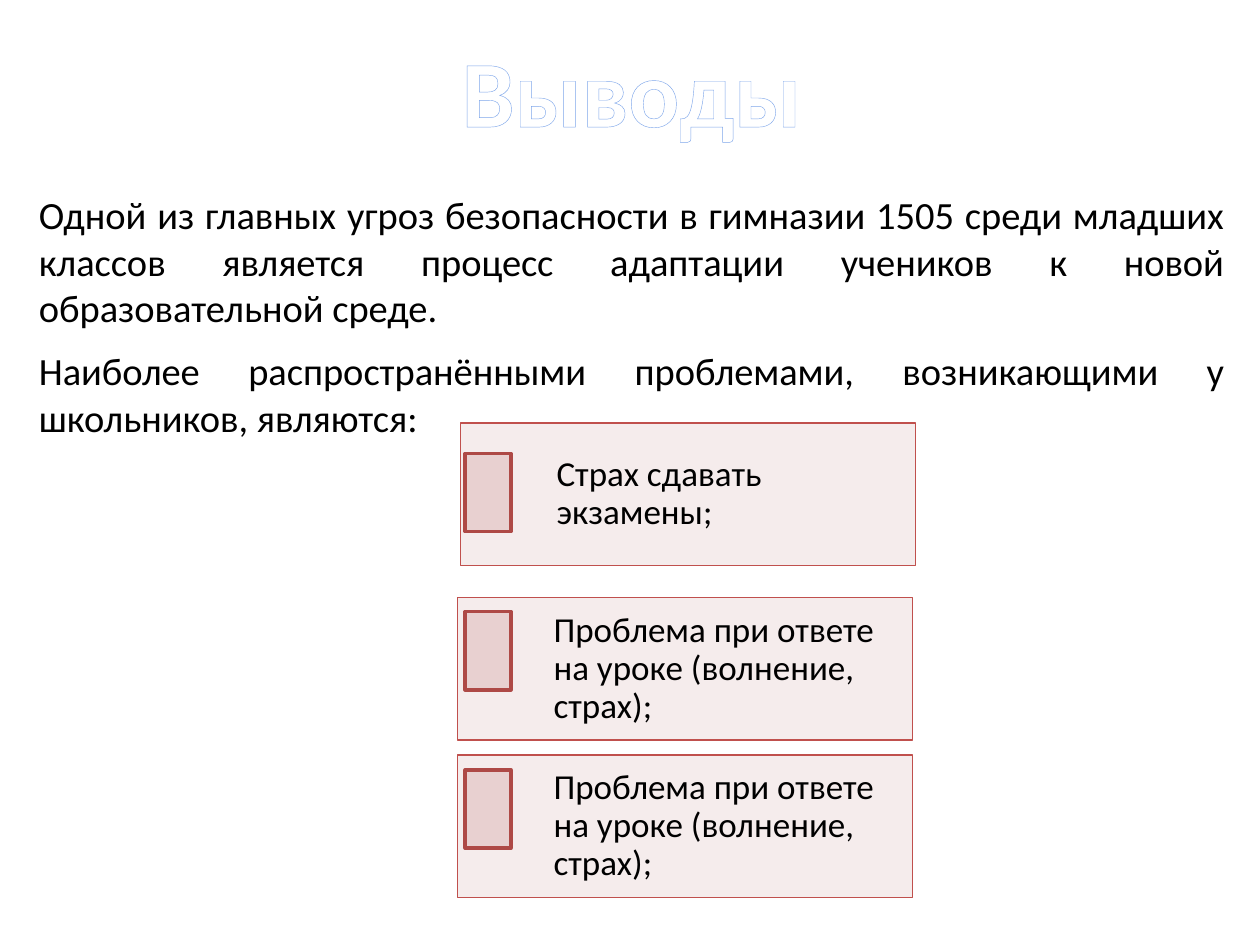
import pptx
import pptx.dml.color
import pptx.enum.shapes
import pptx.enum.text
import pptx.oxml
import pptx.oxml.ns
import pptx.util
from dataclasses import dataclass

Cm, Pt = pptx.util.Cm, pptx.util.Pt
PP_ALIGN = pptx.enum.text.PP_ALIGN
ANCHOR = pptx.enum.text.MSO_ANCHOR


@dataclass(frozen=True)
class Theme:
    font: str = "Calibri"
    title_size: float = 54
    body_size: float = 22
    card_size: float = 20
    white: str = "FFFFFF"
    black: str = "000000"
    outline: str = "7EA6EA"
    fill: str = "E8D0D0"
    card_line: str = "C0504D"
    marker_line: str = "AE4946"


def rgb(value):
    return pptx.dml.color.RGBColor.from_string(value)


def xml(tag, attrs="", inner=""):
    return pptx.oxml.parse_xml(
        f'<a:{tag} {pptx.oxml.ns.nsdecls("a")} {attrs}>{inner}</a:{tag}>')


def write(p, text, *, font, size, color, bold=False, align=PP_ALIGN.LEFT,
          spacing=1.0, before=0):
    """Put one formatted run in a paragraph."""
    p.alignment, p.line_spacing = align, spacing
    p.space_before = Pt(before)
    r = p.add_run()
    r.text = text
    r.font.name, r.font.size, r.font.bold = font, Pt(size), bold
    r.font.color.rgb = rgb(color)
    return r


class SlideBuilder:
    def __init__(self, slide, theme):
        self.s, self.theme = slide, theme

    def frame(self, sp, anchor, wrap=True):
        tf = sp.text_frame
        tf.word_wrap, tf.vertical_anchor = wrap, anchor
        tf.auto_size = pptx.enum.text.MSO_AUTO_SIZE.NONE
        return tf

    def place(self, sp, left, top, width, height):
        sp.left, sp.top, sp.width, sp.height = map(Cm, (left, top, width, height))

    def title(self, text, *box):
        t, sp = self.theme, self.s.shapes.title
        self.place(sp, *box)
        tf = self.frame(sp, ANCHOR.TOP, wrap=False)
        r = write(tf.paragraphs[0], text, font=t.font, size=t.title_size,
                  color=t.white, bold=True, align=PP_ALIGN.CENTER)
        line = f'<a:solidFill><a:srgbClr val="{t.outline}"/></a:solidFill>'
        r.font._element.insert(0, xml("ln", f'w="{Pt(2.48)}"', line))

    def body(self, texts, *box):
        t, sp = self.theme, self.s.placeholders[1]
        self.place(sp, *box)
        tf = self.frame(sp, ANCHOR.TOP)
        for i, text in enumerate(texts):
            p = tf.add_paragraph() if i else tf.paragraphs[0]
            pPr = p._p.get_or_add_pPr()
            pPr.set("marL", "0")
            pPr.set("indent", "0")
            pPr.append(xml("buNone"))
            write(p, text, font=t.font, size=t.body_size, color=t.black,
                  align=PP_ALIGN.JUSTIFY, before=10 if i else 0)

    def rect(self, left, top, width, height, line, weight, alpha=None):
        sp = self.s.shapes.add_shape(pptx.enum.shapes.MSO_SHAPE.RECTANGLE,
                                     *map(Cm, (left, top, width, height)))
        sp.shadow.inherit = False
        sp.fill.solid()
        sp.fill.fore_color.rgb = rgb(self.theme.fill)
        if alpha is not None:
            clr = sp._element.spPr.find(".//" + pptx.oxml.ns.qn("a:srgbClr"))
            clr.append(xml("alpha", f'val="{alpha * 1000}"'))
        sp.line.color.rgb, sp.line.width = rgb(line), Pt(weight)
        return sp

    def card(self, text, left, top, width, height):
        t = self.theme
        sp = self.rect(left, top, width, height, t.card_line, 0.75, alpha=40)
        tf = self.frame(sp, ANCHOR.MIDDLE)
        tf.margin_left = Cm(1.93)
        tf.margin_right = tf.margin_top = tf.margin_bottom = Cm(0.2)
        write(tf.paragraphs[0], text, font=t.font, size=t.card_size,
              color=t.black, spacing=0.9)

    def marker(self, left, top):
        self.rect(left, top, 0.92, 1.58, self.theme.marker_line, 2)


def main():
    prs = pptx.Presentation()
    prs.slide_width, prs.slide_height = Cm(25.4), Cm(19.05)
    b = SlideBuilder(prs.slides.add_slide(prs.slide_layouts[1]), Theme())

    # Title and introduction
    b.title("Выводы", 9.04, 0.53, 7.39, 2.57)
    b.body([
        "Одной из главных угроз безопасности в гимназии 1505 среди младших "
        "классов является процесс адаптации учеников к новой "
        "образовательной среде.",
        "Наиболее распространёнными проблемами, возникающими у школьников, "
        "являются:",
    ], 0.53, 3.73, 24.41, 5.33)

    # Problem cards: text, left, top, marker top
    answer = "Проблема при ответе на уроке (волнение, страх);"
    cards = [
        ("Страх сдавать экзамены;", 9.29, 8.53, 9.14),
        (answer, 9.23, 12.05, 12.33),
        (answer, 9.23, 15.22, 15.52),
    ]
    for text, left, top, marker_top in cards:
        b.card(text, left, top, 9.17, 2.87)
        b.marker(9.38, marker_top)

    prs.save("out.pptx")


if __name__ == "__main__":
    main()
